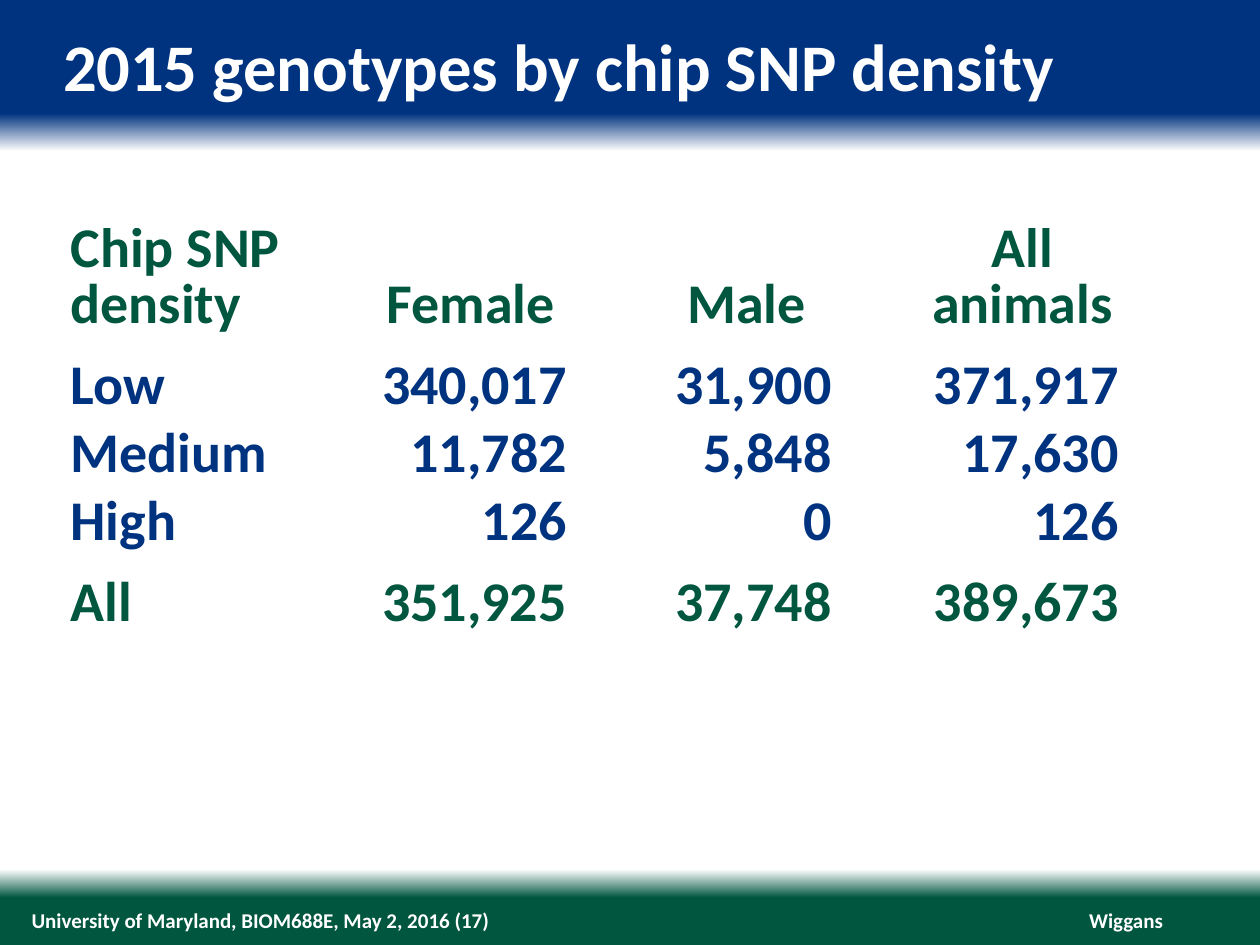
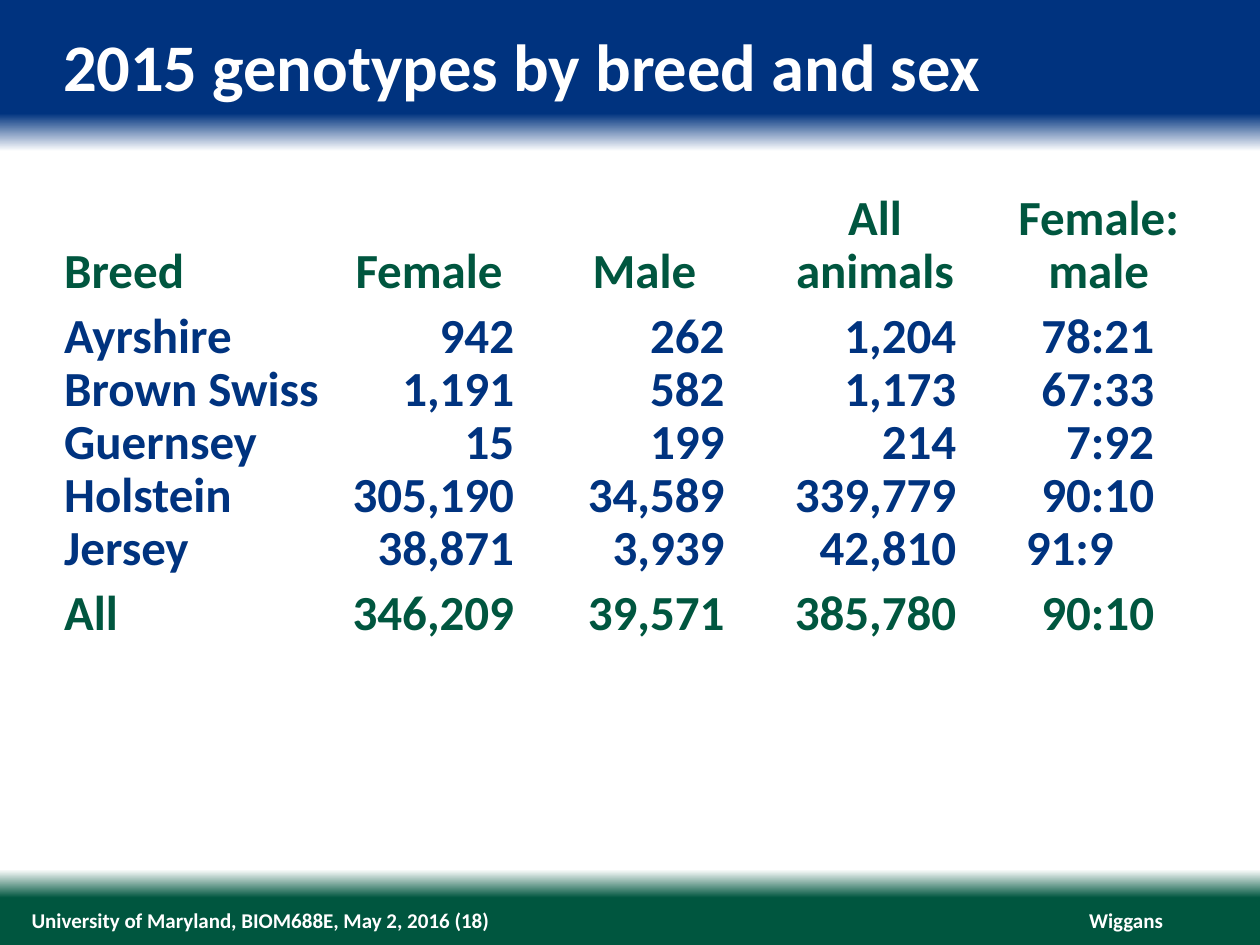
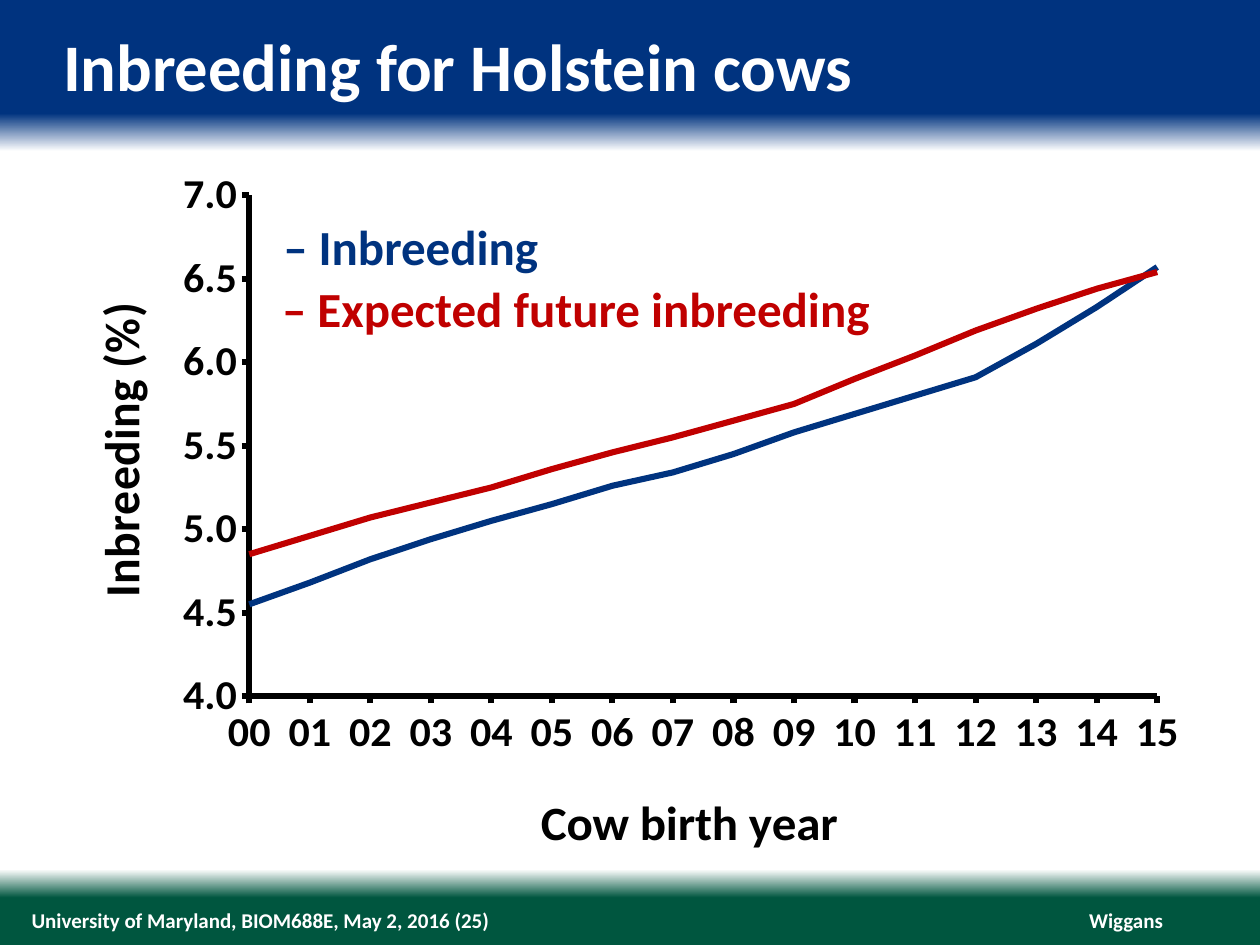
from dataclasses import dataclass
from typing import Optional

from lxml import etree
from pptx import Presentation
from pptx import util as u
from pptx.chart import data as chart_data
from pptx.dml import color
from pptx.enum import chart as ch, text
from pptx.oxml import ns


@dataclass(frozen=True)
class Theme:
    font: str = "Calibri"
    blue: str = "00337F"
    green: str = "00563F"
    red: str = "C00000"
    white: str = "FFFFFF"
    black: str = "000000"
    title_size: float = 38
    footer_size: float = 12
    label_size: float = 28
    tick_size: float = 24
    line_width: float = 3.5


@dataclass(frozen=True)
class Column:
    width: float
    right: float = 0.07        # right margin of the body cells
    header_left: float = 0     # left margin of the header cell
    header_right: float = 0


@dataclass(frozen=True)
class TableSpec:
    left: float
    top: float
    size: float
    columns: list[Column]
    heights: list[float]
    rows: list[list[str]]
    header_spacing: float
    body_spacing: Optional[float] = None


THEME = Theme()
LEFT, CENTER, RIGHT = text.PP_ALIGN.LEFT, text.PP_ALIGN.CENTER, text.PP_ALIGN.RIGHT
MARGIN = 0.07

DENSITY_TABLE = TableSpec(
    0.49, 1.8, 32,
    [Column(2.33, header_left=MARGIN, header_right=MARGIN), Column(1.83, 0.15),
     Column(2.25, 0.3, header_left=0.3), Column(2.43, 0.45)],
    [0.89, 0.64, 0.54, 0.54, 0.64],
    [["Chip SNP density", "Female", "Male", "All\nanimals"],
     ["Low", "340,017", "31,900", "371,917"],
     ["Medium", "11,782", "5,848", "17,630"],
     ["High", "126", "0", "126"],
     ["All", "351,925", "37,748", "389,673"]],
    header_spacing=32)

BREED_TABLE = TableSpec(
    0.44, 1.56, 28,
    [Column(2.29, header_left=MARGIN, header_right=MARGIN), Column(1.35, 0),
     Column(1.82, 0.15, header_left=0.25), Column(2.09, 0.4),
     Column(1.46, 0.29, header_left=MARGIN, header_right=MARGIN)],
    [0.83, 0.52] + [0.42] * 4 + [0.52],
    [["Breed", "Female", "Male", "All\nanimals", "Female:\nmale"],
     ["Ayrshire", "942", "262", "1,204", "78:21"],
     ["Brown Swiss", "1,191", "582", "1,173", "67:33"],
     ["Guernsey", "15", "199", "214", "7:92"],
     ["Holstein", "305,190", "34,589", "339,779", "90:10"],
     ["Jersey", "38,871", "3,939", "42,810", "91:9"],
     ["All", "346,209", "39,571", "385,780", "90:10"]],
    header_spacing=30, body_spacing=30)

BIRTH_YEARS = [f"{year:02d}" for year in range(16)]
# Name, colour, values, left and top of the label
INBREEDING_LINES = [
    ("Inbreeding", THEME.blue,
     [4.55, 4.68, 4.82, 4.94, 5.05, 5.15, 5.26, 5.34,
      5.45, 5.58, 5.69, 5.8, 5.91, 6.11, 6.33, 6.57], 2.15, 1.67),
    ("Expected future inbreeding", THEME.red,
     [4.85, 4.96, 5.07, 5.16, 5.25, 5.36, 5.46, 5.55,
      5.65, 5.75, 5.9, 6.04, 6.19, 6.32, 6.44, 6.54], 2.14, 2.16),
]


# Shared helpers
def rgb(value: str) -> color.RGBColor:
    return color.RGBColor.from_string(value)


def style_font(font, size: float, hex_color: str) -> None:
    font.name, font.size, font.bold = THEME.font, u.Pt(size), True
    font.color.rgb = rgb(hex_color)


def clear_margins(frame) -> None:
    frame.margin_left = frame.margin_right = 0
    frame.margin_top = frame.margin_bottom = 0


def add_label(slide, words: str, place: tuple, size: float, hex_color: str,
              align=LEFT, wrap: bool = True):
    box = slide.shapes.add_textbox(*map(u.Inches, place))
    frame = box.text_frame
    frame.word_wrap = wrap
    frame.text = words
    para = frame.paragraphs[0]
    para.alignment = align
    style_font(para.font, size, hex_color)
    return frame


def paint_background(deck) -> None:
    """Blue band at the top and green band at the foot, both fading to white."""
    master = deck.slide_master
    fill = master.background.fill
    fill.gradient()
    fill.gradient_angle = 270
    stops = master.element.find(".//" + ns.qn("a:gsLst"))
    for stop in list(stops):
        stops.remove(stop)
    for percent, value in [(0, THEME.blue), (12, THEME.blue), (16, THEME.white),
                           (92, THEME.white), (95, THEME.green), (100, THEME.green)]:
        stop = etree.SubElement(stops, ns.qn("a:gs"), pos=str(percent * 1000))
        etree.SubElement(stop, ns.qn("a:srgbClr"), val=value)


def add_page(deck, title: str, number: int):
    page = deck.slides.add_slide(deck.slide_layouts.get_by_name("Title Only"))
    heading = page.shapes.title
    heading.left, heading.top = u.Inches(0.5), u.Inches(0.2)
    heading.width, heading.height = u.Inches(9), u.Inches(0.64)
    frame = heading.text_frame
    frame.text = title
    clear_margins(frame)
    frame.vertical_anchor = text.MSO_ANCHOR.TOP
    frame.auto_size = text.MSO_AUTO_SIZE.NONE
    frame.paragraphs[0].alignment = LEFT
    style_font(frame.paragraphs[0].font, THEME.title_size, THEME.white)

    # Footer
    course = f"University of Maryland, BIOM688E, May 2, 2016 ({number})"
    for words, left, width, align, wrap in [("Wiggans", 8.64, 0.59, RIGHT, False),
                                            (course, 0.25, 7.42, LEFT, True)]:
        footer = add_label(page, words, (left, 7.2, width, 0.2),
                           THEME.footer_size, THEME.white, align, wrap)
        clear_margins(footer)
        footer.vertical_anchor = text.MSO_ANCHOR.MIDDLE
    return page


# Tables
def add_count_table(page, spec: TableSpec):
    width = sum(column.width for column in spec.columns)
    table = page.shapes.add_table(
        len(spec.rows), len(spec.columns), u.Inches(spec.left), u.Inches(spec.top),
        u.Inches(width), u.Inches(sum(spec.heights))).table
    table.first_row = table.horz_banding = False
    for column, column_spec in zip(table.columns, spec.columns):
        column.width = u.Inches(column_spec.width)
    last = len(spec.rows) - 1
    for i, (words, height) in enumerate(zip(spec.rows, spec.heights)):
        table.rows[i].height = u.Inches(height)
        for j, (word, column_spec) in enumerate(zip(words, spec.columns)):
            header = i == 0
            cell = table.cell(i, j)
            cell.text = word
            cell.fill.background()
            cell.vertical_anchor = text.MSO_ANCHOR.BOTTOM
            cell.margin_top = cell.margin_bottom = 0
            left = column_spec.header_left if header else MARGIN if j == 0 else 0
            right = column_spec.header_right if header else column_spec.right
            cell.margin_left, cell.margin_right = u.Inches(left), u.Inches(right)
            spacing = spec.header_spacing if header else spec.body_spacing
            for para in cell.text_frame.paragraphs:
                para.alignment = LEFT if j == 0 else CENTER if header else RIGHT
                if spacing:
                    para.line_spacing = u.Pt(spacing)
                style_font(para.font, spec.size,
                           THEME.green if i in (0, last) else THEME.blue)
    return table


# Chart
def place_in_chart(parent, index: int, **fractions: float) -> None:
    """Give a plot area or title a fixed place, in fractions of the chart."""
    layout = parent.find(ns.qn("c:layout"))
    if layout is None:
        layout = etree.Element(ns.qn("c:layout"))
        parent.insert(index, layout)
    manual = etree.SubElement(layout, ns.qn("c:manualLayout"))
    settings = {"xMode": "edge", "yMode": "edge", **fractions}
    if "w" in fractions:
        settings = {"layoutTarget": "inner", **settings}
    for name, value in settings.items():
        etree.SubElement(manual, ns.qn(f"c:{name}"), val=str(value))


def style_axis(axis, title: str, x: float, y: float) -> None:
    axis.has_major_gridlines = False
    axis.major_tick_mark = ch.XL_TICK_MARK.OUTSIDE
    axis.minor_tick_mark = ch.XL_TICK_MARK.NONE
    axis.format.line.color.rgb = rgb(THEME.black)
    axis.format.line.width = u.Pt(THEME.line_width)
    style_font(axis.tick_labels.font, THEME.tick_size, THEME.black)
    frame = axis.axis_title.text_frame
    frame.text = title
    style_font(frame.paragraphs[0].font, THEME.label_size, THEME.black)
    place_in_chart(axis.axis_title._element, 1, x=x, y=y)


def add_inbreeding_chart(page) -> None:
    values = chart_data.CategoryChartData(number_format="0.00")
    values.categories = BIRTH_YEARS
    for name, _, numbers, _, _ in INBREEDING_LINES:
        values.add_series(name, numbers)
    chart = page.shapes.add_chart(
        ch.XL_CHART_TYPE.LINE, u.Inches(0.34), u.Inches(0.87),
        u.Inches(9.47), u.Inches(6.02), values).chart
    chart.has_legend = chart.has_title = False
    chart.font.name, chart.font.size = THEME.font, u.Pt(18)
    plot = chart.plots[0]
    plot.vary_by_categories = False
    for series, (_, hex_color, *_) in zip(plot.series, INBREEDING_LINES):
        series.smooth = False
        series.marker.style = ch.XL_MARKER_STYLE.NONE
        series.format.line.color.rgb = rgb(hex_color)
        series.format.line.width = u.Pt(THEME.line_width)

    style_axis(chart.category_axis, "Cow birth year", 0.41, 0.91)
    style_axis(chart.value_axis, "Inbreeding (%)", 0.03, 0.26)
    axis = chart.value_axis
    axis.minimum_scale, axis.maximum_scale, axis.major_unit = 4, 7, 0.5
    axis.tick_labels.number_format = "#,##0.0"
    axis.tick_labels.number_format_is_linked = False

    # Lines start on the value axis
    crossing = etree.Element(ns.qn("c:crossBetween"), val="midCat")
    axis._element.find(ns.qn("c:majorUnit")).addprevious(crossing)
    area = chart._chartSpace.find(".//" + ns.qn("c:plotArea"))
    place_in_chart(area, 0, x=0.173, y=0.116, w=0.761, h=0.678)


def main() -> None:
    deck = Presentation()
    deck.slide_width, deck.slide_height = u.Inches(10), u.Inches(7.5)
    paint_background(deck)

    add_count_table(add_page(deck, "2015 genotypes by chip SNP density", 17), DENSITY_TABLE)

    breeds = add_count_table(add_page(deck, "2015 genotypes by breed and sex", 18), BREED_TABLE)
    breeds.cell(5, 4).margin_right = u.Inches(0.61)  # the Jersey ratio stands further left

    page = add_page(deck, "Inbreeding for Holstein cows", 25)
    add_inbreeding_chart(page)
    for name, hex_color, _, left, top in INBREEDING_LINES:
        add_label(page, f"– {name}", (left, top, 4.97, 0.57), THEME.label_size, hex_color)

    deck.save("out.pptx")


if __name__ == "__main__":
    main()
